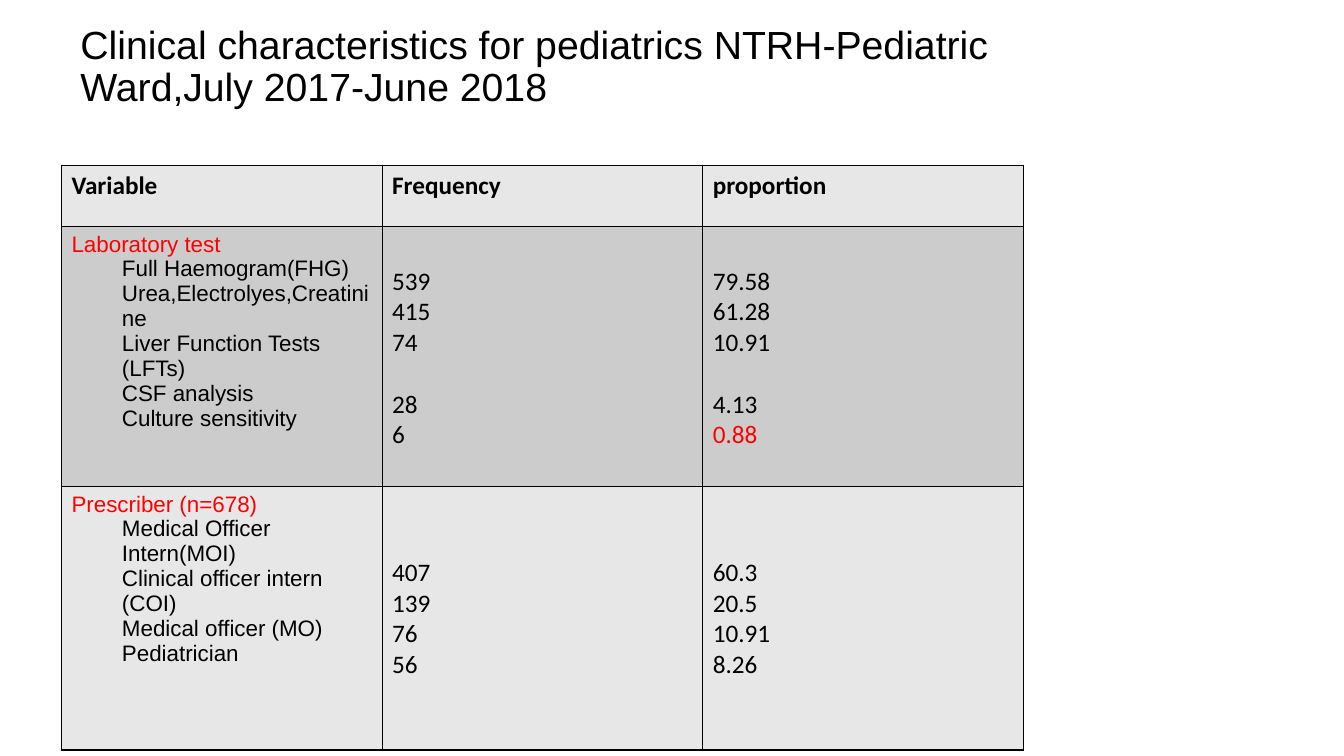
"""Build the slide of clinical characteristics for the pediatric ward."""
import pptx
import pptx.dml.color
import pptx.enum.text
import pptx.oxml
import pptx.oxml.ns
import pptx.util
from pptx.util import Inches

COLORS = {"text": "000000", "accent": "FF0000", "light": "E7E7E7", "dark": "CCCCCC"}


def add_text(tf, text, size=18, font="Calibri", color="text", bold=False,
             indent=0, before=0, spacing=None):
    p = tf.paragraphs[0]
    if p.runs:
        p = tf.add_paragraph()
    p.space_before = pptx.util.Pt(before)
    if spacing:
        p.line_spacing = spacing
    if indent:
        p.level = 1
        pPr = p._p.get_or_add_pPr()
        pPr.set("marL", str(Inches(indent)))
        pPr.set("indent", "0")
    r = p.add_run()
    r.text = text
    r.font.size = pptx.util.Pt(size)
    r.font.name = font
    r.font.bold = bold
    r.font.color.rgb = pptx.dml.color.RGBColor.from_string(COLORS[color])


def set_cell(cell, fill):
    tcPr = cell._tc.get_or_add_tcPr()
    for side in ("L", "R", "T", "B"):
        tcPr.append(pptx.oxml.parse_xml(
            f'<a:ln{side} {pptx.oxml.ns.nsdecls("a")} w="12700"><a:solidFill>'
            f'<a:srgbClr val="{COLORS["text"]}"/></a:solidFill></a:ln{side}>'))
    cell.fill.solid()
    cell.fill.fore_color.rgb = pptx.dml.color.RGBColor.from_string(COLORS[fill])


prs = pptx.Presentation()
prs.slide_width, prs.slide_height = Inches(13.33), Inches(7.5)
s = prs.slides.add_slide(prs.slide_layouts[6])

title = s.shapes.add_textbox(Inches(0.7), Inches(0.1), Inches(9.44), Inches(1.14))
tf = title.text_frame
tf.word_wrap = True
tf.vertical_anchor = pptx.enum.text.MSO_ANCHOR.MIDDLE
add_text(tf, "Clinical characteristics for pediatrics NTRH-Pediatric Ward,July 2017-June 2018",
         size=28, font="Arial", spacing=0.9)

headers = ["Variable", "Frequency", "proportion"]
groups = [
    {"name": "Laboratory test", "fill": "dark", "height": 2.58, "top": 0.39,
     "items": ["Full Haemogram(FHG)", "Urea,Electrolyes,Creatinine",
               "Liver Function Tests (LFTs)", "CSF analysis", "Culture sensitivity"],
     "values": [["539", "415", "74", "28", "6"],
                ["79.58", "61.28", "10.91", "4.13", "0.88"]],
     "gap_before": ["28", "4.13"], "marked": ["0.88"]},
    {"name": "Prescriber (n=678)", "fill": "light", "height": 2.61, "top": 0.7,
     "items": ["Medical Officer Intern(MOI)", "Clinical officer intern (COI)",
               "Medical officer (MO)", "Pediatrician"],
     "values": [["407", "139", "76", "56"], ["60.3", "20.5", "10.91", "8.26"]],
     "gap_before": [], "marked": []},
]

frame = s.shapes.add_table(len(groups) + 1, len(headers), Inches(0.61), Inches(1.64),
                           Inches(9.54), Inches(5.8))
table = frame.table
table.first_row = table.horz_banding = False
for column in table.columns:
    column.width = Inches(3.18)

table.rows[0].height = Inches(0.61)
for cell, header in zip(table.rows[0].cells, headers):
    set_cell(cell, "light")
    add_text(cell.text_frame, header, bold=True)

for row, group in enumerate(groups, 1):
    table.rows[row].height = Inches(group["height"])
    for cell in table.rows[row].cells:
        set_cell(cell, group["fill"])
    tf = table.cell(row, 0).text_frame
    add_text(tf, group["name"], size=16, font="Arial", color="accent")
    for item in group["items"]:
        add_text(tf, item, size=16, font="Arial", indent=0.5)
    for col, values in enumerate(group["values"], 1):
        cell = table.cell(row, col)
        cell.margin_top = Inches(group["top"])
        for value in values:
            add_text(cell.text_frame, value,
                     color="accent" if value in group["marked"] else "text",
                     before=22 if value in group["gap_before"] else 0)

prs.save("out.pptx")
